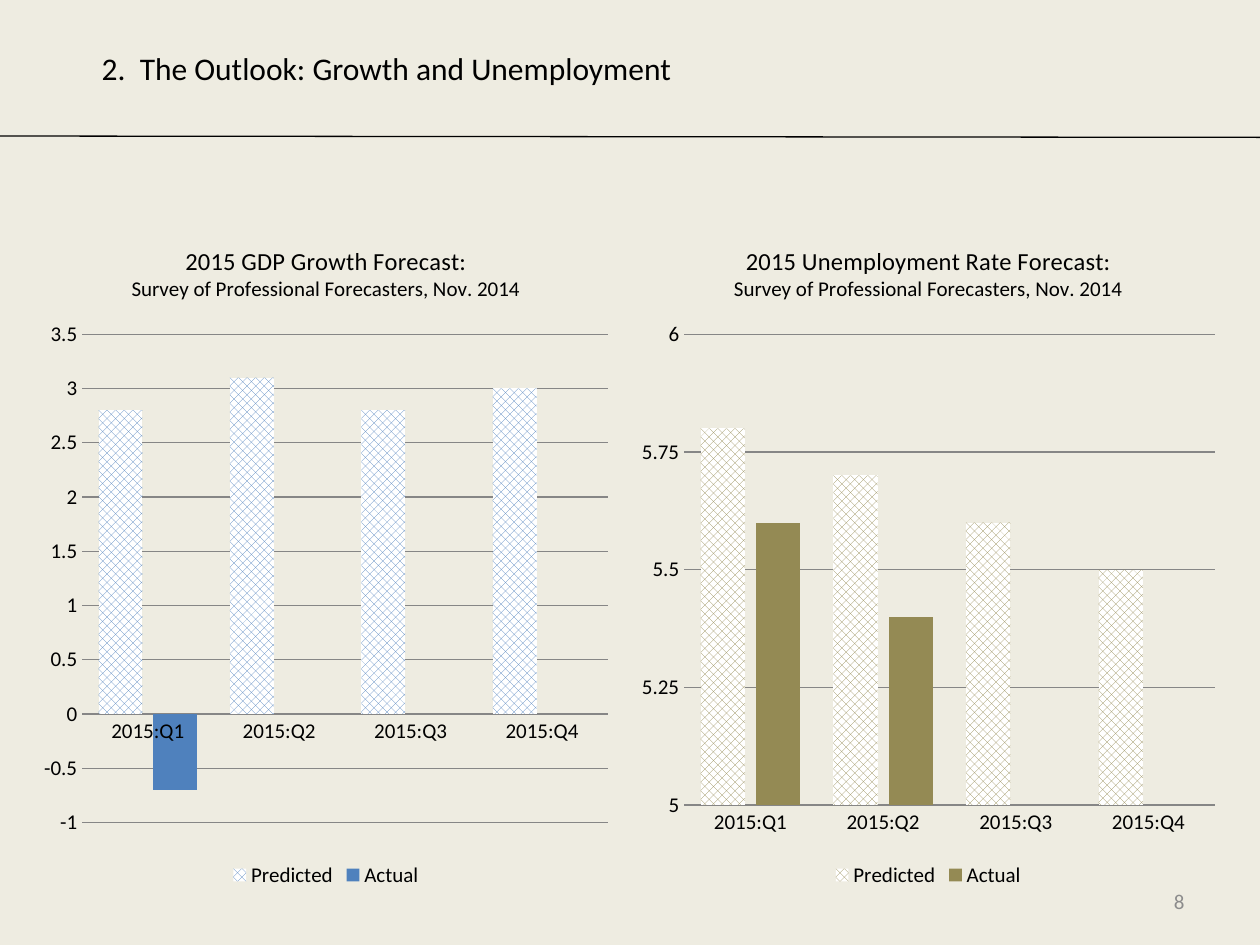
"""Build the outlook slide with its two forecast charts."""
import dataclasses

import lxml.etree
import pptx
import pptx.chart.data
import pptx.dml.color
import pptx.enum.chart
import pptx.enum.dml
import pptx.enum.shapes
import pptx.enum.text
import pptx.oxml.ns
import pptx.util

Pt = pptx.util.Pt
Align = pptx.enum.text.PP_ALIGN
Chart = pptx.enum.chart


@dataclasses.dataclass
class Theme:
    font: str = "Calibri"
    back: str = "EEECE1"
    ink: str = "000000"
    white: str = "FFFFFF"
    grey: str = "8C8C8C"
    grid: str = "868686"
    blue: str = "4F81BD"
    olive: str = "948A54"
    head: int = 18
    title: int = 14
    body: int = 12
    base: int = 10


def tint(code):
    return pptx.dml.color.RGBColor.from_string(code)


def write(para, text, font, size, color, align=None):
    run = para.add_run()
    run.text = text
    run.font.name, run.font.size, run.font.bold = font, Pt(size), False
    run.font.color.rgb = tint(color)
    para.alignment = align


class Deck:
    def __init__(self, theme):
        self.theme = theme
        self.file = pptx.Presentation()
        self.file.slide_width, self.file.slide_height = Pt(720), Pt(540)
        self.slide = self.file.slides.add_slide(self.file.slide_layouts[6])
        fill = self.slide.background.fill
        fill.solid()
        fill.fore_color.rgb = tint(theme.back)

    def text(self, box, text, size, color, align=Align.LEFT, indent=0):
        frame = self.slide.shapes.add_textbox(*map(Pt, box)).text_frame
        frame.word_wrap = True
        frame.vertical_anchor = pptx.enum.text.MSO_ANCHOR.MIDDLE
        para = frame.paragraphs[0]
        write(para, text, self.theme.font, size, color, align)
        if indent:
            para._p.get_or_add_pPr().set("marL", str(Pt(indent)))

    def rule(self, *ends):
        kind = pptx.enum.shapes.MSO_CONNECTOR.STRAIGHT
        line = self.slide.shapes.add_connector(kind, *map(Pt, ends))
        line.line.color.rgb = tint(self.theme.ink)
        line.line.width = Pt(0.75)
        lxml.etree.SubElement(line._element.spPr, pptx.oxml.ns.qn("a:effectLst"))

    def chart(self, box, lines, series, color, low, high, step):
        theme = self.theme
        data = pptx.chart.data.CategoryChartData()
        data.categories = [f"2015:Q{n}" for n in range(1, 5)]
        for name, values in series.items():
            data.add_series(name, values)
        kind = Chart.XL_CHART_TYPE.COLUMN_CLUSTERED
        chart = self.slide.shapes.add_chart(kind, *map(Pt, box), data).chart
        chart.font.name, chart.font.size = theme.font, Pt(theme.base)
        chart.font.color.rgb = tint(theme.ink)
        self.title(chart, lines)
        self.axes(chart, low, high, step)
        self.bars(chart.plots[0], color)
        chart.has_legend = True
        chart.legend.position = Chart.XL_LEGEND_POSITION.BOTTOM
        chart.legend.include_in_layout = False
        chart.legend.font.size = Pt(theme.body)

    def title(self, chart, lines):
        theme = self.theme
        chart.has_title = True
        frame = chart.chart_title.text_frame
        first, second = frame.paragraphs[0], frame.add_paragraph()
        write(first, lines[0], theme.font, theme.title, theme.ink)
        write(second, lines[1], theme.font, theme.body, theme.ink)

    def axes(self, chart, low, high, step):
        values = chart.value_axis
        values.minimum_scale, values.maximum_scale = low, high
        values.major_unit = step
        values.has_major_gridlines = True
        values.format.line.fill.background()
        for line in (values.major_gridlines.format.line, chart.category_axis.format.line):
            line.color.rgb = tint(self.theme.grid)
            line.width = Pt(0.75)
        for axis in (values, chart.category_axis):
            axis.major_tick_mark = Chart.XL_TICK_MARK.NONE
            axis.tick_labels.font.size = Pt(self.theme.body)
            axis.tick_labels.number_format = "General"
            axis.tick_labels.number_format_is_linked = False

    def bars(self, plot, color):
        plot.gap_width, plot.overlap = 75, -25
        plot.vary_by_categories = False
        for series in plot.series:
            series.invert_if_negative = False
        guess, fact = (series.format.fill for series in plot.series)
        guess.patterned()
        guess.pattern = pptx.enum.dml.MSO_PATTERN.PERCENT_50
        guess.fore_color.rgb = tint(color)
        guess.back_color.rgb = tint(self.theme.white)
        fact.solid()
        fact.fore_color.rgb = tint(color)


def main():
    theme = Theme()
    deck = Deck(theme)
    survey = "Survey of Professional Forecasters, Nov. 2014"
    deck.text((516, 500.5, 168, 29), "8", theme.body, theme.grey, Align.RIGHT)
    deck.chart((18.5, 126, 335.5, 384), ("2015 GDP Growth Forecast:", survey),
               {"Predicted": (2.8, 3.1, 2.8, 3), "Actual": (-0.7, None, None, None)},
               theme.blue, -1, 3.5, 0.5)
    deck.rule(0, 77.75, 720, 78.5)
    deck.chart((360, 126, 341, 384), ("2015 Unemployment Rate Forecast:", survey),
               {"Predicted": (5.8, 5.7, 5.6, 5.5), "Actual": (5.6, 5.4, None, None)},
               theme.olive, 5, 6, 0.25)
    deck.text((24, 24.5, 684, 29), "2.  The Outlook: Growth and Unemployment",
              theme.head, theme.ink, indent=27)
    deck.file.save("out.pptx")


if __name__ == "__main__":
    main()
